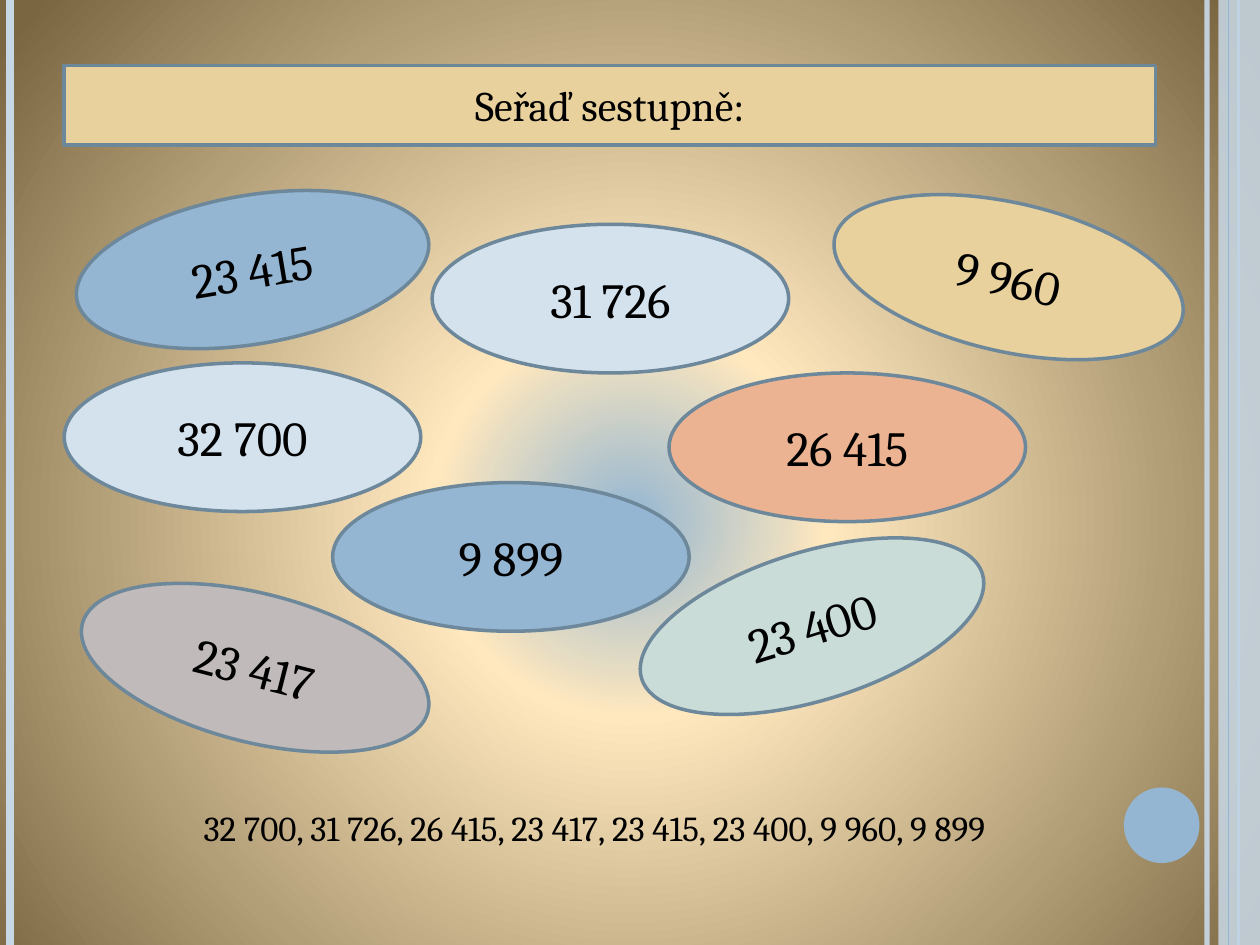
import pptx
import pptx.dml.color
import pptx.enum.shapes
import pptx.enum.text
import pptx.oxml
import pptx.oxml.ns
import pptx.util
from pptx.util import Inches

RGBColor = pptx.dml.color.RGBColor
SHAPE = pptx.enum.shapes.MSO_SHAPE

BLACK = RGBColor(0x00, 0x00, 0x00)
BLUE = RGBColor(0x94, 0xB6, 0xD2)
PALE_BLUE = RGBColor(0xD4, 0xE2, 0xED)
RAIL_BLUE = RGBColor(0xC8, 0xD7, 0xE5)
OUTLINE = RGBColor(0x6D, 0x87, 0x9B)
SAND = RGBColor(0xE8, 0xD1, 0x9D)
SALMON = RGBColor(0xEB, 0xB3, 0x91)
GREY = RGBColor(0xC0, 0xBA, 0xBA)
MINT = RGBColor(0xCA, 0xDC, 0xD8)
CREAM = RGBColor(0xFF, 0xE8, 0xBE)
BROWN = RGBColor(0x7A, 0x67, 0x42)

FONT = "Cambria"
WIDTH, HEIGHT = 10, 7.5
OVAL_W, OVAL_H = 2.83, 1.18

TITLE = "Seřaď sestupně:"
ANSWER = "32 700, 31 726, 26 415, 23 417, 23 415, 23 400, 9 960, 9 899"

# Number, left, top, rotation, fill
OVALS = [
    ("23 415", 0.59, 1.55, -9.6, BLUE),
    ("9 960", 6.59, 1.61, 12.8, SAND),
    ("23 417", 0.61, 4.71, 14.3, GREY),
    ("23 400", 5.03, 4.38, -17.1, MINT),
    ("9 899", 2.64, 3.83, 0, BLUE),
    ("26 415", 5.31, 2.96, 0, SALMON),
    ("31 726", 3.43, 1.78, 0, PALE_BLUE),
    ("32 700", 0.51, 2.88, 0, PALE_BLUE),
]

# Position in percent, colour
BACKGROUND_STOPS = [(0, BLUE), (25, CREAM), (100, BROWN)]


def set_background(slide):
    stops = "".join(
        f'<a:gs pos="{pos * 1000}"><a:srgbClr val="{color}"/></a:gs>'
        for pos, color in BACKGROUND_STOPS)
    bg = pptx.oxml.parse_xml(
        f'<p:bg {pptx.oxml.ns.nsdecls("p", "a")}><p:bgPr>'
        f'<a:gradFill rotWithShape="1"><a:gsLst>{stops}</a:gsLst>'
        '<a:path path="circle">'
        '<a:fillToRect l="10000" t="110000" r="10000" b="100000"/>'
        '</a:path></a:gradFill><a:effectLst/></p:bgPr></p:bg>')
    slide.element.cSld.insert(0, bg)


def set_opacity(part, percent):
    tag = pptx.oxml.ns.qn("a:srgbClr")
    color = next(part._element.spPr.iter(tag))
    color.append(pptx.oxml.parse_xml(
        f'<a:alpha {pptx.oxml.ns.nsdecls("a")} val="{percent * 1000}"/>'))


def add_rail(slide, x, color, width):
    line = slide.shapes.add_connector(
        pptx.enum.shapes.MSO_CONNECTOR.STRAIGHT,
        Inches(x), Inches(0), Inches(x), Inches(HEIGHT))
    line.line.color.rgb = color
    line.line.width = pptx.util.Pt(width)
    line._element.spPr.append(pptx.oxml.parse_xml(
        f'<a:effectLst {pptx.oxml.ns.nsdecls("a")}/>'))
    return line


def add_text(sp, text, size):
    tf = sp.text_frame
    tf.word_wrap = True
    p = tf.paragraphs[0]
    p.alignment = pptx.enum.text.PP_ALIGN.CENTER
    r = p.add_run()
    r.text = text
    r.font.name = FONT
    r.font.size = pptx.util.Pt(size)
    r.font.color.rgb = BLACK


def add_filled(slide, kind, box, fill, outline=None):
    sp = slide.shapes.add_shape(kind, *(Inches(v) for v in box))
    sp.shadow.inherit = False
    sp.fill.solid()
    sp.fill.fore_color.rgb = fill
    if outline is None:
        sp.line.fill.background()
    else:
        sp.line.color.rgb = outline
        sp.line.width = pptx.util.Pt(2)
    return sp


def add_label(slide, kind, box, fill, text, size):
    sp = add_filled(slide, kind, box, fill, OUTLINE)
    sp.text_frame.vertical_anchor = pptx.enum.text.MSO_ANCHOR.MIDDLE
    add_text(sp, text, size)
    return sp


def main():
    prs = pptx.Presentation()
    prs.slide_width, prs.slide_height = Inches(WIDTH), Inches(HEIGHT)
    slide = prs.slides.add_slide(prs.slide_layouts[6])
    set_background(slide)

    # Side rails and corner dot
    set_opacity(add_rail(slide, 9.58, RAIL_BLUE, 3), 93)
    add_rail(slide, 0.08, RAIL_BLUE, 4.5)
    add_rail(slide, 9.83, BLUE, 1.5)
    band = add_filled(slide, SHAPE.RECTANGLE, (9.67, 0, 0.33, HEIGHT), RAIL_BLUE)
    set_opacity(band, 87)
    add_rail(slide, 9.75, BLUE, 0.75)
    add_filled(slide, SHAPE.OVAL, (8.92, 6.25, 0.6, 0.6), BLUE)

    # Title bar
    add_label(slide, SHAPE.RECTANGLE, (0.51, 0.52, 8.66, 0.63), SAND, TITLE, 24)

    # Numbers to sort
    for number, left, top, rotation, fill in OVALS:
        sp = add_label(slide, SHAPE.OVAL, (left, top, OVAL_W, OVAL_H),
                       fill, number, 28)
        sp.rotation = rotation

    # Sorted answer
    answer = slide.shapes.add_textbox(
        Inches(0.43), Inches(6.35), Inches(8.58), Inches(0.44))
    add_text(answer, ANSWER, 20)

    prs.save("out.pptx")


if __name__ == "__main__":
    main()
